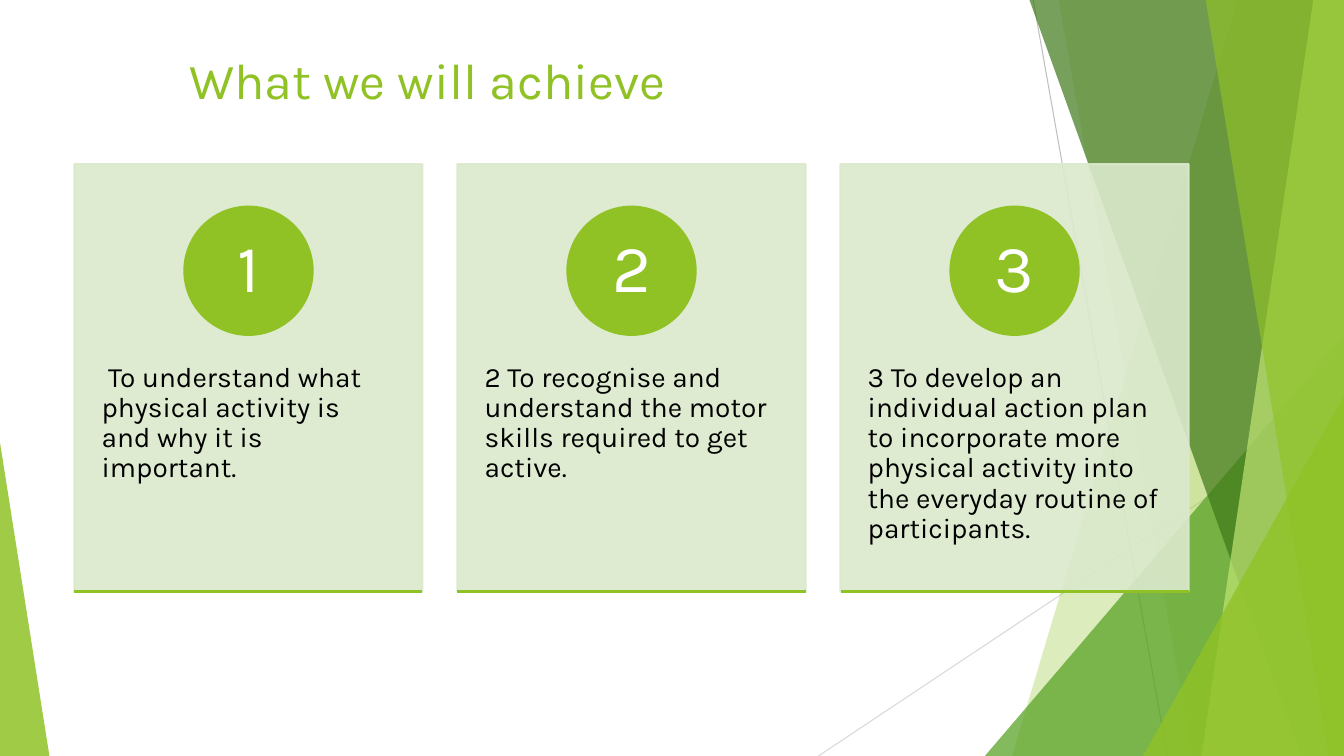
from lxml.etree import SubElement
from pptx import Presentation
from pptx.dml.color import RGBColor
from pptx.enum.shapes import MSO_CONNECTOR, MSO_SHAPE
from pptx.enum.text import MSO_ANCHOR, PP_ALIGN
from pptx.oxml.ns import qn
from pptx.util import Pt

# Content
TITLE = "What we will achieve"
GOALS = [
    ("1", " To understand what physical activity is and why it is important."),
    ("2", "2 To recognise and understand the motor skills required to get active."),
    ("3", "3 To develop an individual action plan to incorporate more physical "
          "activity into the everyday routine of participants. "),
]

# Style
FONT = "Karla"
LIME = RGBColor(0x90, 0xC2, 0x26)
GREEN = RGBColor(0x54, 0xA0, 0x21)
FOREST = RGBColor(0x3F, 0x78, 0x19)
PALE_LIME = RGBColor(0xC0, 0xE4, 0x74)
CARD_GREEN = RGBColor(0xDB, 0xE9, 0xCD)
GREY = RGBColor(0xBF, 0xBF, 0xBF)
LIGHT_GREY = RGBColor(0xD9, 0xD9, 0xD9)
BLACK = RGBColor(0, 0, 0)
WHITE = RGBColor(0xFF, 0xFF, 0xFF)

# Background geometry, in points
W, H = 960, 540
THIN_LINES = [(738, 0, 833.8, H, GREY), (W, 290.2, 584.6, H, LIGHT_GREY)]
# Bands reach the right edge: top-left x, bottom-left x, colour, opacity %
BANDS_BACK = [(884.2, 722.9, LIME, 30), (756, 851.8, LIME, 20)]
BANDS_FRONT = [(735.1, 929.5, FOREST, 70), (938.2, 858.2, PALE_LIME, 70),
               (861.1, 949, LIME, 65)]
# Triangles stand on the bottom edge: left, top, width, apex, colour, opacity %
TRIANGLE_BACK = (703.5, 239.8, 256.5, 1, GREEN, 72)
TRIANGLES_FRONT = [(816.5, 283, 143.5, 1, LIME, 80), (0, 316.1, 35.3, 0, LIME, 85)]

# Card geometry, in points
CARD_X, CARD_Y, CARD_W, CARD_H = 53.2, 117.2, 248.6, 305.3
CARD_STEP = 273.6
CIRCLE_Y, CIRCLE_D = 147.6, 91.6
BODY_Y, BODY_H = 233.3, 183.6
BODY_INSETS = (19.4, 25.9, 19.4, 25.9)

prs = Presentation()
prs.slide_width, prs.slide_height = Pt(W), Pt(H)
s = prs.slides.add_slide(prs.slide_layouts[6])


def set_opacity(color_format_owner, percent):
    """Add an alpha value to the solid fill of a shape or outline."""
    color = color_format_owner.find(qn("a:solidFill"))[0]
    SubElement(color, qn("a:alpha")).set("val", str(percent * 1000))


def paint(sp, color, opacity=100, outline=False):
    sp.shadow.inherit = False
    sp.fill.solid()
    sp.fill.fore_color.rgb = color
    set_opacity(sp._element.spPr, opacity)
    if outline:
        sp.line.color.rgb = color
        sp.line.width = Pt(1.5)
        set_opacity(sp._element.spPr.find(qn("a:ln")), opacity)
    else:
        sp.line.fill.background()


def add_line(x1, y1, x2, y2, color, width=0.75):
    line = s.shapes.add_connector(MSO_CONNECTOR.STRAIGHT, Pt(x1), Pt(y1), Pt(x2), Pt(y2))
    line.line.color.rgb = color
    line.line.width = Pt(width)
    SubElement(line._element.spPr, qn("a:effectLst"))


def add_band(top_x, bottom_x, color, opacity):
    builder = s.shapes.build_freeform(Pt(top_x), Pt(-0.7))
    corners = [(W, -0.7), (W, H), (bottom_x, H)]
    builder.add_line_segments([(Pt(x), Pt(y)) for x, y in corners], close=True)
    paint(builder.convert_to_shape(), color, opacity)


def add_triangle(x, y, w, apex, color, opacity):
    sp = s.shapes.add_shape(MSO_SHAPE.ISOSCELES_TRIANGLE, Pt(x), Pt(y), Pt(w), Pt(H - y))
    sp.adjustments[0] = apex
    paint(sp, color, opacity)


def write(sp, text, size, color, insets, align=PP_ALIGN.LEFT,
          anchor=MSO_ANCHOR.TOP, spacing=0.9):
    tf = sp.text_frame
    tf.word_wrap = True
    tf.vertical_anchor = anchor
    tf.margin_left, tf.margin_top, tf.margin_right, tf.margin_bottom = map(Pt, insets)
    p = tf.paragraphs[0]
    p.text = text
    p.alignment = align
    p.line_spacing = spacing
    font = p.runs[0].font
    font.name, font.size = FONT, Pt(size)
    font.color.rgb = color


def add_text(x, y, w, h, *args, **kwargs):
    write(s.shapes.add_textbox(Pt(x), Pt(y), Pt(w), Pt(h)), *args, **kwargs)


def add_card(x, number, goal):
    card = s.shapes.add_shape(MSO_SHAPE.RECTANGLE, Pt(x), Pt(CARD_Y), Pt(CARD_W), Pt(CARD_H))
    paint(card, CARD_GREEN, 90, outline=True)
    add_text(x, BODY_Y, CARD_W, BODY_H, goal, 20, BLACK, BODY_INSETS)
    circle = s.shapes.add_shape(MSO_SHAPE.OVAL, Pt(x + (CARD_W - CIRCLE_D) / 2),
                                Pt(CIRCLE_Y), Pt(CIRCLE_D), Pt(CIRCLE_D))
    paint(circle, LIME, outline=True)
    write(circle, number, 48, WHITE, (0, 0, 0, 0), PP_ALIGN.CENTER, MSO_ANCHOR.MIDDLE)
    add_line(x, CARD_Y + CARD_H, x + CARD_W, CARD_Y + CARD_H, LIME, 1.5)


# Background facets, from back to front
for thin_line in THIN_LINES:
    add_line(*thin_line)
for band in BANDS_BACK:
    add_band(*band)
add_triangle(*TRIANGLE_BACK)
for band in BANDS_FRONT:
    add_band(*band)
for triangle in TRIANGLES_FRONT:
    add_triangle(*triangle)

# Title
add_text(128.2, 31.7, 676.8, 103.7, TITLE, 36, LIME, (7.2, 3.6, 7.2, 3.6), spacing=1.0)

# Goal cards
for i, (number, goal) in enumerate(GOALS):
    add_card(CARD_X + i * CARD_STEP, number, goal)

prs.save("out.pptx")
